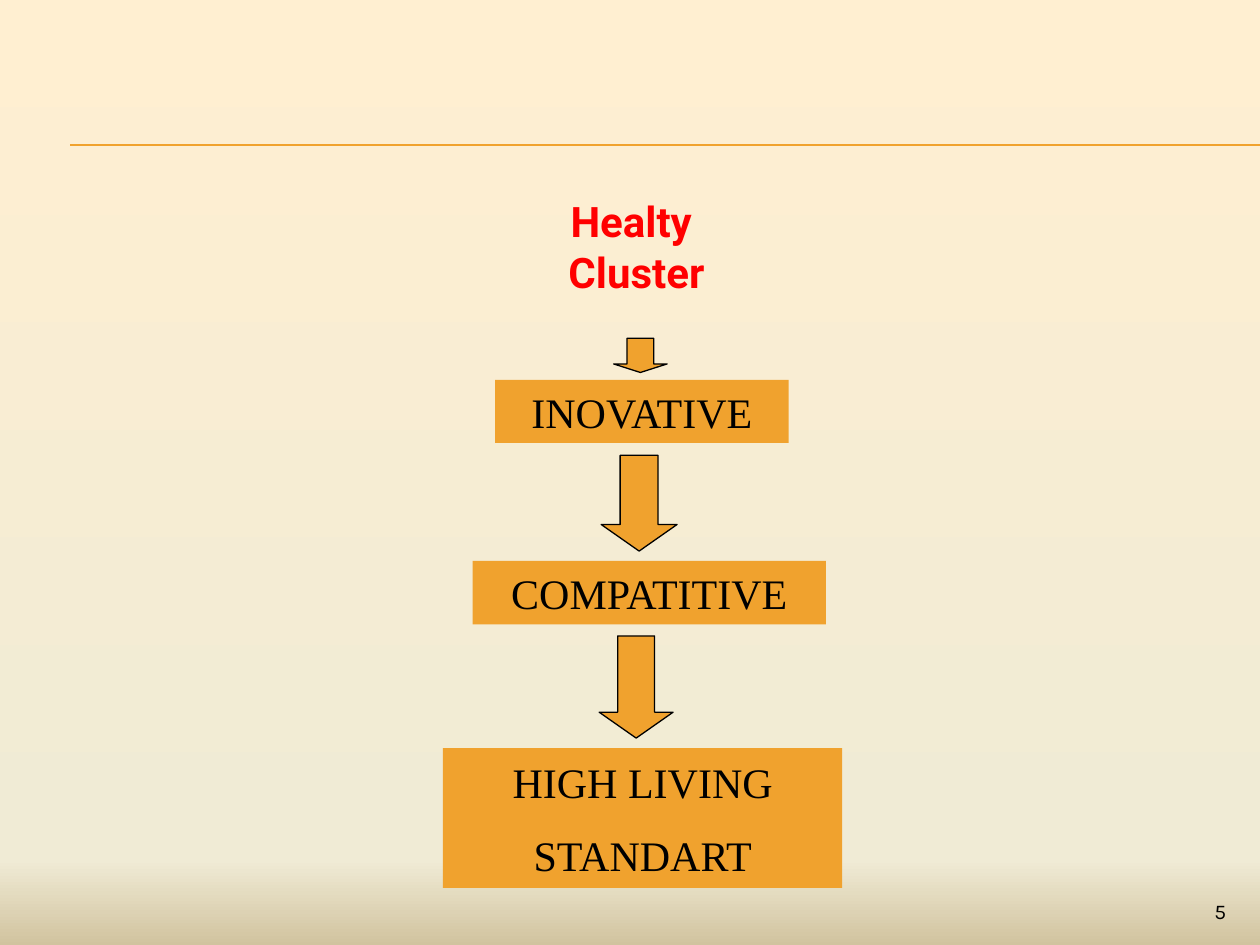
from lxml import etree
from pptx import Presentation
from pptx import util as u
from pptx.dml.color import RGBColor
from pptx.enum import shapes, text
from pptx.oxml import ns

AMBER = RGBColor(0xF0, 0xA2, 0x2E)
BLACK = RGBColor(0, 0, 0)
RED = RGBColor(0xFF, 0, 0)
CREAM = RGBColor(0xFF, 0xEF, 0xD1)
SAND = RGBColor(0xF0, 0xEB, 0xD5)
KHAKI = RGBColor(0xD1, 0xC3, 0x9F)


def write(frame, lines, font="Times New Roman", size=24, color=BLACK, bold=False,
          align=text.PP_ALIGN.CENTER, before=0, wrap=True, anchor=text.MSO_ANCHOR.MIDDLE):
    """Fill a text frame with one paragraph per line."""
    frame.word_wrap = wrap
    frame.auto_size = text.MSO_AUTO_SIZE.NONE
    frame.vertical_anchor = anchor
    for i, line in enumerate(lines):
        paragraph = frame.paragraphs[0] if i == 0 else frame.add_paragraph()
        paragraph.alignment = align
        paragraph.space_before = u.Pt(before)
        run = paragraph.add_run()
        run.text = line
        run.font.name, run.font.size = font, u.Pt(size)
        run.font.bold = bold
        run.font.color.rgb = color


class ClusterSlide:
    """Holds the slide and draws its elements in one style."""

    def __init__(self, deck):
        self.slide = deck.slides.add_slide(deck.slide_layouts[5])

    def background(self, stops):
        fill = self.slide.background.fill
        fill.gradient()
        fill.gradient_angle = 270
        stop_list = self.slide.element.find(".//" + ns.qn("a:gsLst"))
        for old in list(stop_list):
            stop_list.remove(old)
        for percent, color in stops:
            stop = etree.SubElement(stop_list, ns.qn("a:gs"), pos=str(percent * 1000))
            etree.SubElement(stop, ns.qn("a:srgbClr"), val=str(color))

    def rule(self, left, right, y):
        line = self.slide.shapes.add_connector(
            shapes.MSO_CONNECTOR.STRAIGHT, u.Cm(left), u.Cm(y), u.Cm(right), u.Cm(y))
        line.line.color.rgb = AMBER
        line.line.width = u.Pt(0.75)
        etree.SubElement(line.element.spPr, ns.qn("a:effectLst"))

    def block(self, preset, box):
        shape = self.slide.shapes.add_shape(preset, *map(u.Cm, box))
        shape.shadow.inherit = False
        shape.fill.solid()
        shape.fill.fore_color.rgb = AMBER
        return shape

    def stage(self, box, lines):
        stage = self.block(shapes.MSO_SHAPE.RECTANGLE, box)
        stage.line.fill.background()
        write(stage.text_frame, lines, before=13)

    def arrow(self, box, head):
        arrow = self.block(shapes.MSO_SHAPE.DOWN_ARROW, box)
        arrow.adjustments[0], arrow.adjustments[1] = 0.5, head
        arrow.line.color.rgb = BLACK
        arrow.line.width = u.Pt(0.75)

    def heading(self, box, lines):
        title = self.slide.shapes.title
        title.left, title.top, title.width, title.height = map(u.Cm, box)
        write(title.text_frame, lines, font="Roboto", color=RED, bold=True, wrap=False)

    def page_number(self, box, number):
        label = self.slide.shapes.add_textbox(*map(u.Cm, box))
        write(label.text_frame, [number], font="Karla", size=12,
              align=text.PP_ALIGN.RIGHT, anchor=text.MSO_ANCHOR.TOP)


def main():
    deck = Presentation()
    deck.slide_width, deck.slide_height = u.Cm(25.4), u.Cm(19.05)
    page = ClusterSlide(deck)
    page.background([(0, CREAM), (91, SAND), (100, KHAKI)])
    for y in (2.92, 2.94):
        page.rule(1.42, 25.4, y)
    page.heading((11.05, 3.81, 3.56, 2.31), ["Healty ", "Cluster"])
    stages = [
        ((9.98, 7.66, 5.92, 1.27), ["INOVATIVE"]),
        ((9.53, 11.31, 7.12, 1.28), ["COMPATITIVE"]),
        ((8.93, 15.08, 8.05, 2.82), ["HIGH LIVING", "STANDART"]),
    ]
    for box, lines in stages:
        page.stage(box, lines)
    arrows = [
        ((12.37, 6.82, 1.08, 0.69), 0.25),
        ((12.12, 9.18, 1.53, 1.93), 0.35),
        ((12.08, 12.82, 1.49, 2.06), 0.35),
    ]
    for box, head in arrows:
        page.arrow(box, head)
    page.page_number((22.86, 17.98, 2.11, 0.69), "5")
    deck.save("out.pptx")


if __name__ == "__main__":
    main()
